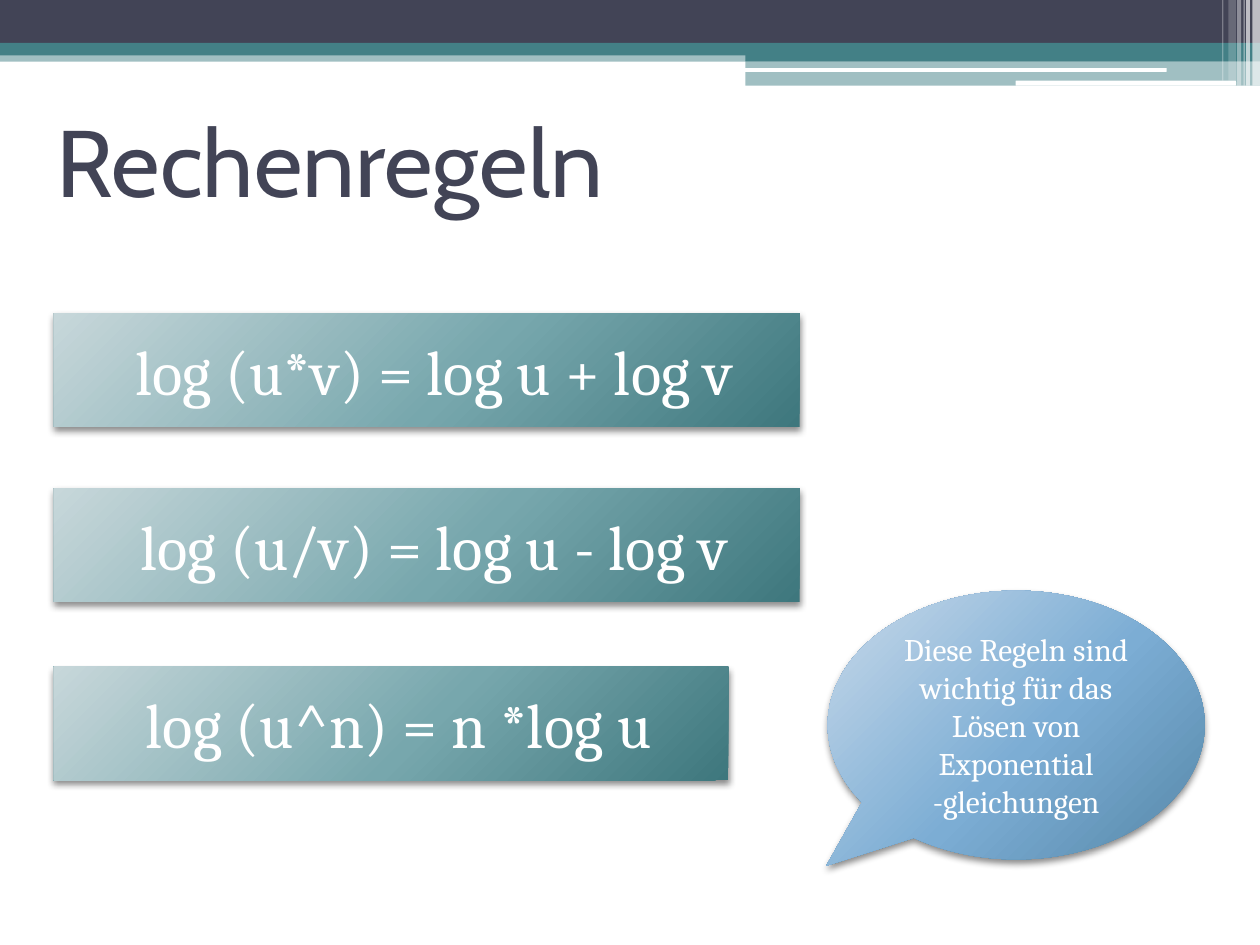
import pptx
import pptx.util
import pptx.dml.color
import pptx.enum.shapes
import pptx.enum.text
import pptx.oxml
import pptx.oxml.ns

Pt = pptx.util.Pt
SHAPES = pptx.enum.shapes.MSO_SHAPE
ANCHOR = pptx.enum.text.MSO_ANCHOR
ALIGN = pptx.enum.text.PP_ALIGN
NAMESPACE = pptx.oxml.ns.nsdecls("a")

COLORS = {"dark": "424456", "teal": "438086", "white": "FFFFFF", "shadow": "000000"}
GRADIENTS = {
    "rule": {0: "C7D7DA", 55: "77A7AD", 100: "3E777D"},
    "note": {0: "C7D9EA", 55: "7CADD4", 100: "5688A9"},
}

BANDS = [
    ((0, 28.8, 720, 6.5), "teal", 50),
    ((0, 0, 720, 24.5), "dark", 100),
    ((0, 24.5, 720, 7.2), "teal", 100),
    ((426, 28, 294, 7), "teal", 100),
    ((426, 34.6, 294, 14.4), "teal", 50),
]
ROUNDED_BARS = [(425.5, 38.9, 241.2, 2.2), (580.3, 46.1, 126, 2.9)]
STRIPES = [
    (715.7, 4.3, 49, 65),
    (712.1, 2.2, 49, 65),
    (710.6, 0.7, 49, 60),
    (707, 2.2, 49, 40),
    (702, 4.3, 46.1, 20),
    (698.4, 0.7, 46.1, 30),
]

TITLE = "Rechenregeln"
TITLE_BOX = (25.2, 43.2, 648, 96.5)
RULES = [
    ("log (u*v) = log u + log v", 179.1, 426.2),
    ("log (u/v) = log u - log v", 279.1, 426.2),
    ("log (u^n) = n *log u", 381.1, 385.4),
]
RULE_LEFT, RULE_HEIGHT = 30.8, 64.8
NOTE = ["Diese Regeln sind wichtig für das Lösen von Exponential", "-gleichungen"]
NOTE_BOX = (473, 337.5, 215.5, 153.6)
NOTE_TAIL = (-0.504, 0.524)

TITLE_FONT = {"name": "Cabin", "size": Pt(54)}
RULE_FONT = {"name": "Cambria", "size": Pt(36)}
NOTE_FONT = {"name": "Cambria", "size": Pt(18)}
RULE_PARAGRAPH = {"alignment": ALIGN.CENTER, "space_before": Pt(3)}
RULE_INDENT = {"marL": Pt(28.8), "indent": Pt(-20.2)}


def set_values(target, values):
    for name, value in values.items():
        setattr(target, name, value)


def add_shape(slide, kind, box, color="white", opacity=100):
    shape = slide.shapes.add_shape(kind, *map(Pt, box))
    shape.shadow.inherit = False
    shape.line.fill.background()
    shape.fill.solid()
    shape.fill.fore_color.rgb = pptx.dml.color.RGBColor.from_string(COLORS[color])
    if opacity < 100:
        fill_color = shape.element.spPr.find(".//" + pptx.oxml.ns.qn("a:srgbClr"))
        fill_color.append(pptx.oxml.parse_xml(f'<a:alpha {NAMESPACE} val="{opacity * 1000}"/>'))
    return shape


def add_glossy_shape(slide, kind, box, gradient):
    shape = add_shape(slide, kind, box)
    properties = shape.element.spPr
    stops = "".join(
        f'<a:gs pos="{position * 1000}"><a:srgbClr val="{color}"/></a:gs>'
        for position, color in GRADIENTS[gradient].items()
    )
    fill = pptx.oxml.parse_xml(
        f'<a:gradFill {NAMESPACE} rotWithShape="1"><a:gsLst>{stops}</a:gsLst>'
        '<a:path path="circle"><a:fillToRect l="-40000" t="-90000" r="140000" b="190000"/>'
        "</a:path></a:gradFill>"
    )
    properties.replace(properties.find(pptx.oxml.ns.qn("a:solidFill")), fill)
    shadow = pptx.oxml.parse_xml(
        f'<a:outerShdw {NAMESPACE} blurRad="{Pt(4)}" dist="{Pt(2)}" dir="5400000" rotWithShape="0">'
        f'<a:srgbClr val="{COLORS["shadow"]}"><a:alpha val="45000"/></a:srgbClr></a:outerShdw>'
    )
    properties.find(pptx.oxml.ns.qn("a:effectLst")).append(shadow)
    return shape


def write_text(shape, lines, font, color, paragraph_format, indent):
    frame = shape.text_frame
    set_values(frame, {"word_wrap": True, "vertical_anchor": ANCHOR.MIDDLE})
    frame.text = "\n".join(lines)
    for paragraph in frame.paragraphs:
        set_values(paragraph, paragraph_format)
        for name, value in indent.items():
            paragraph._p.get_or_add_pPr().set(name, str(value))
        for run in paragraph.runs:
            set_values(run.font, font)
            run.font.color.rgb = pptx.dml.color.RGBColor.from_string(COLORS[color])


def main():
    presentation = pptx.Presentation()
    set_values(presentation, {"slide_width": Pt(720), "slide_height": Pt(540)})
    slide = presentation.slides.add_slide(presentation.slide_layouts[6])

    for box, color, opacity in BANDS:
        add_shape(slide, SHAPES.RECTANGLE, box, color, opacity)
    for box in ROUNDED_BARS:
        add_shape(slide, SHAPES.ROUNDED_RECTANGLE, box)
    for left, width, height, opacity in STRIPES:
        add_shape(slide, SHAPES.RECTANGLE, (left, 0, width, height), "white", opacity)

    title = slide.shapes.add_textbox(*map(Pt, TITLE_BOX))
    write_text(title, [TITLE], TITLE_FONT, "dark", {"alignment": ALIGN.LEFT}, {})

    for text, top, width in RULES:
        box = (RULE_LEFT, top, width, RULE_HEIGHT)
        rule = add_glossy_shape(slide, SHAPES.RECTANGLE, box, "rule")
        write_text(rule, [text], RULE_FONT, "white", RULE_PARAGRAPH, RULE_INDENT)

    note = add_glossy_shape(slide, SHAPES.OVAL_CALLOUT, NOTE_BOX, "note")
    for index, value in enumerate(NOTE_TAIL):
        note.adjustments[index] = value
    write_text(note, NOTE, NOTE_FONT, "white", {"alignment": ALIGN.CENTER}, {})

    presentation.save("out.pptx")


if __name__ == "__main__":
    main()
